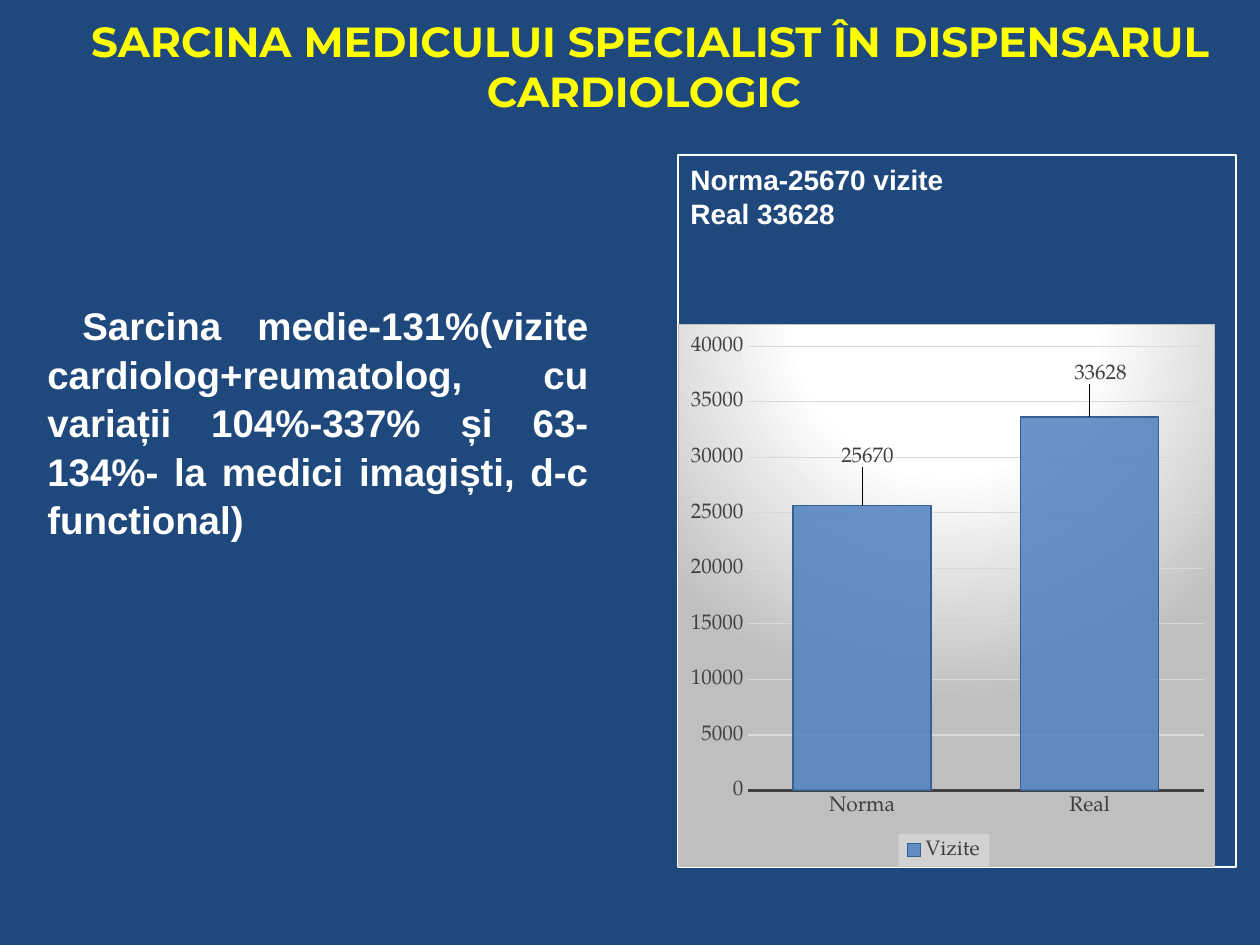
"""Build the slide on the cardiology specialist's workload."""
from lxml import etree
from pptx import Presentation
from pptx.chart.data import CategoryChartData
from pptx.dml.color import RGBColor
from pptx.enum.chart import XL_CHART_TYPE as ChartType
from pptx.enum.chart import XL_LABEL_POSITION as LabelPosition
from pptx.enum.chart import XL_LEGEND_POSITION as LegendPosition
from pptx.enum.chart import XL_TICK_MARK as TickMark
from pptx.enum.shapes import MSO_SHAPE as Shape
from pptx.enum.text import MSO_ANCHOR as Anchor
from pptx.enum.text import MSO_AUTO_SIZE as AutoSize
from pptx.enum.text import PP_ALIGN as Align
from pptx.oxml import parse_xml
from pptx.oxml.ns import nsdecls, qn
from pptx.util import Pt

PX = 914400 / 126
NAVY = RGBColor(0x1F, 0x49, 0x7D)
YELLOW = RGBColor(0xFF, 0xFF, 0x00)
WHITE = RGBColor(0xFF, 0xFF, 0xFF)
BLUE = RGBColor(0x4F, 0x81, 0xBD)
DARK_BLUE = RGBColor(0x37, 0x60, 0x92)
CHARCOAL = RGBColor(0x40, 0x40, 0x40)
GRID_GREY = RGBColor(0xD9, 0xD9, 0xD9)
CHART_FONT = "TeX Gyre Pagella"


def px(*lengths):
    return [round(length * PX) for length in lengths]


def set_font(font, name, size, color, bold=False):
    font.name = name
    font.size = Pt(size)
    font.color.rgb = color
    font.bold = bold


deck = Presentation()
deck.slide_width, deck.slide_height = px(1260, 945)
page = deck.slides.add_slide(deck.slide_layouts[5])
page.background.fill.solid()
page.background.fill.fore_color.rgb = NAVY

title = page.shapes.title
title.left, title.top, title.width, title.height = px(64, 5, 1172, 121)
workload = page.shapes.add_textbox(*px(35, 294, 566, 357))
panel = page.shapes.add_shape(Shape.RECTANGLE, *px(678, 155, 558, 712))
panel.shadow.inherit = False
panel.fill.background()
panel.line.color.rgb = WHITE
panel.line.width = Pt(0.75)

texts = [
    (title, ["SARCINA MEDICULUI SPECIALIST ÎN DISPENSARUL CARDIOLOGIC "],
     "Montserrat", 24, YELLOW, Align.CENTER, Anchor.MIDDLE, 1.0),
    (workload, ["Sarcina medie-131%(vizite cardiolog+reumatolog, cu variații "
                "104%-337% și 63-134%- la medici imagiști, d-c functional)"],
     "Arial", 22, WHITE, Align.JUSTIFY, Anchor.TOP, 1.05),
    (panel, ["Norma-25670 vizite", "Real 33628"],
     "Arial", 16, WHITE, Align.LEFT, Anchor.TOP, 1.03),
]
for box, lines, font, size, color, align, anchor, spacing in texts:
    frame = box.text_frame
    frame.word_wrap = True
    frame.auto_size = AutoSize.NONE
    frame.vertical_anchor = anchor
    for index, line in enumerate(lines):
        para = frame.add_paragraph() if index else frame.paragraphs[0]
        para.alignment = align
        para.line_spacing = spacing
        span = para.add_run()
        span.text = line
        set_font(span.font, font, size, color, bold=True)
workload.text_frame.paragraphs[0]._p.get_or_add_pPr().set("indent", str(px(35)[0]))

data = CategoryChartData()
data.categories = ["Norma", "Real"]
data.add_series("Vizite", [25670, 33628])
chart = page.shapes.add_chart(
    ChartType.COLUMN_CLUSTERED, *px(678, 324, 537, 543), data).chart
chart.has_title = False
set_font(chart.font, CHART_FONT, 12, CHARCOAL)

for axis in (chart.category_axis, chart.value_axis):
    axis.major_tick_mark = axis.minor_tick_mark = TickMark.NONE
    set_font(axis.tick_labels.font, CHART_FONT, 12, CHARCOAL)
chart.category_axis.format.line.color.rgb = CHARCOAL
chart.category_axis.format.line.width = Pt(1.5)
value_axis = chart.value_axis
value_axis.minimum_scale, value_axis.maximum_scale = 0, 40000
value_axis.major_unit = 5000
value_axis.format.line.fill.background()
value_axis.major_gridlines.format.line.color.rgb = GRID_GREY
value_axis.major_gridlines.format.line.width = Pt(0.75)

plot = chart.plots[0]
plot.gap_width = 65
plot.vary_by_categories = False
visits = plot.series[0]
visits.format.fill.solid()
visits.format.fill.fore_color.rgb = BLUE
visits.format.line.color.rgb = DARK_BLUE
visits.format.line.width = Pt(0.75)
visits_color = visits._element.find(".//" + qn("a:srgbClr"))
etree.SubElement(visits_color, qn("a:alpha"), val="85000")

for index in range(2):
    label = visits.points[index].data_label
    label.position = LabelPosition.OUTSIDE_END
    set_font(label.font, CHART_FONT, 12, CHARCOAL)

chart.has_legend = True
legend = chart.legend
legend.position = LegendPosition.BOTTOM
legend.include_in_layout = False
set_font(legend.font, CHART_FONT, 12, CHARCOAL)
legend._element.get_or_add_txPr().addprevious(parse_xml(
    f'<c:spPr {nsdecls("c", "a")}><a:solidFill><a:srgbClr val="F2F2F2">'
    '<a:alpha val="39000"/></a:srgbClr></a:solidFill></c:spPr>'))

plot_area = chart._chartSpace.chart.plotArea
norma_label, real_label = visits._element.findall(".//" + qn("c:dLbl"))
layouts = [
    (plot_area, 0, dict(layoutTarget="inner", xMode="edge", yMode="edge",
                        x=0.13, y=0.04, w=0.85, h=0.82)),
    (legend._element, 1, dict(xMode="edge", yMode="edge",
                              x=0.41, y=0.94, w=0.17, h=0.06)),
    (norma_label, 1, dict(x=0.01, y=-0.06)),
    (real_label, 1, dict(x=0.02, y=-0.05)),
]
for parent, position, values in layouts:
    for old in parent.findall(qn("c:layout")):
        parent.remove(old)
    layout = etree.Element(qn("c:layout"))
    manual = etree.SubElement(layout, qn("c:manualLayout"))
    for name, value in values.items():
        etree.SubElement(manual, qn("c:" + name), val=str(value))
    parent.insert(position, layout)

stops = "".join(f'<a:gs pos="{place}"><a:srgbClr val="{color}"/></a:gs>' for place, color
                in [(0, "FFFFFF"), (39000, "FFFFFF"), (100000, "BFBFBF")])
chart._chartSpace.chart.addnext(parse_xml(
    f'<c:spPr {nsdecls("c", "a")}><a:gradFill><a:gsLst>{stops}</a:gsLst>'
    '<a:path path="circle"><a:fillToRect l="50000" t="-80000" r="50000" b="180000"/>'
    '</a:path></a:gradFill><a:ln w="9525"><a:solidFill><a:srgbClr val="BFBFBF"/>'
    '</a:solidFill></a:ln></c:spPr>'))

deck.save("out.pptx")
